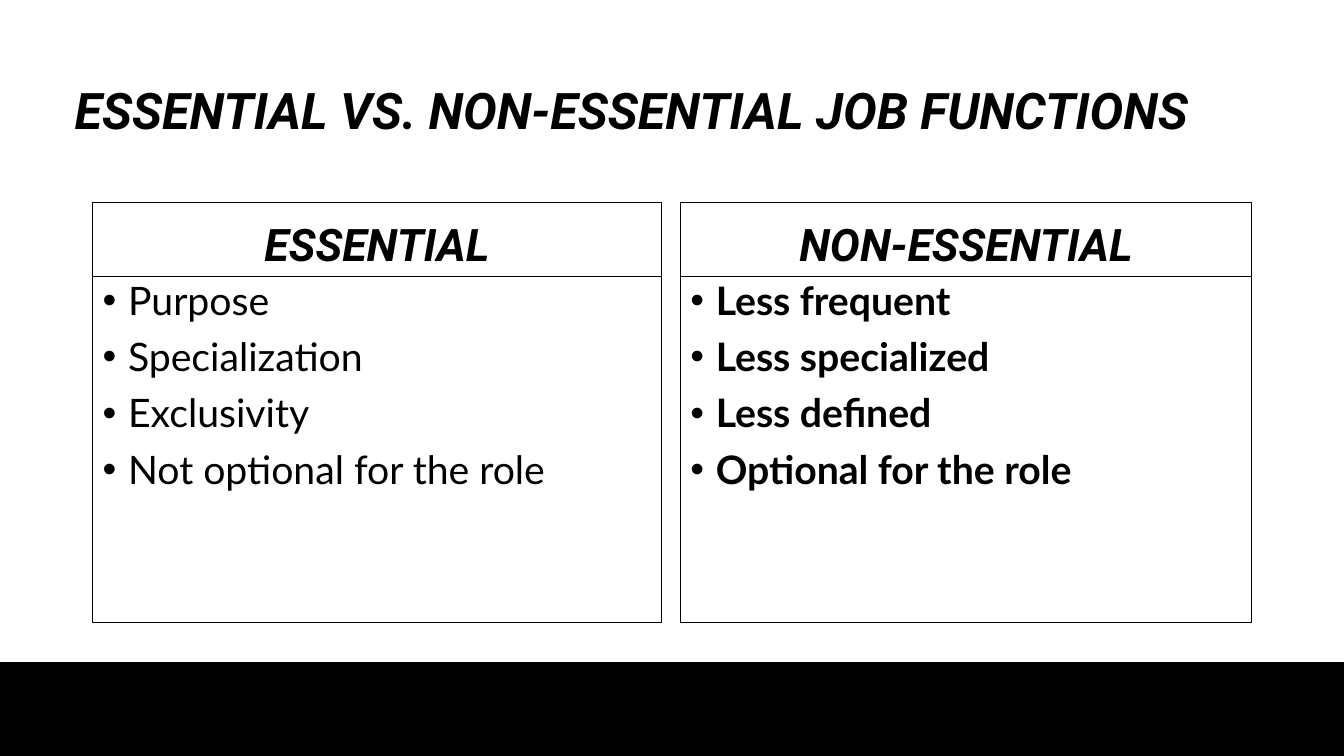
import pptx
import pptx.dml.color
import pptx.enum.shapes
import pptx.enum.text
import pptx.oxml.ns
import pptx.util
from lxml import etree

Cm = pptx.util.Cm
Pt = pptx.util.Pt
ALIGN = pptx.enum.text.PP_ALIGN
ANCHOR = pptx.enum.text.MSO_ANCHOR


def color(hex_code):
    return pptx.dml.color.RGBColor.from_string(hex_code)


class SlideBuilder:
    """Hold the slide and its style, and draw each kind of element."""

    ink = "000000"
    heading_font = "Roboto"
    body_font = "Lato"

    def __init__(self, slide):
        self.slide = slide

    def box(self, left, top, width, height, line_width, fill=None):
        box = self.slide.shapes.add_shape(
            pptx.enum.shapes.MSO_SHAPE.RECTANGLE,
            Cm(left), Cm(top), Cm(width), Cm(height))
        box.shadow.inherit = False
        if fill:
            box.fill.solid()
            box.fill.fore_color.rgb = color(fill)
        else:
            box.fill.background()
        box.line.color.rgb = color(self.ink)
        box.line.width = Pt(line_width)
        return box.text_frame

    def styled_run(self, paragraph, text, font, size, bold=False, italic=False):
        paragraph.line_spacing = 0.9
        run = paragraph.add_run()
        run.text = text
        run.font.name = font
        run.font.size = Pt(size)
        run.font.bold = bold
        run.font.italic = italic
        run.font.color.rgb = color(self.ink)

    def heading(self, frame, text, size, align, anchor):
        frame.word_wrap = True
        frame.vertical_anchor = anchor
        paragraph = frame.paragraphs[0]
        paragraph.alignment = align
        self.styled_run(paragraph, text, self.heading_font, size, True, True)

    def title(self, text, left, top, width, height):
        frame = self.slide.shapes.add_textbox(
            Cm(left), Cm(top), Cm(width), Cm(height)).text_frame
        self.heading(frame, text, 36, ALIGN.LEFT, ANCHOR.MIDDLE)

    def bullet(self, paragraph):
        properties = paragraph._p.get_or_add_pPr()
        properties.set("marL", str(Cm(0.64)))
        properties.set("indent", str(-Cm(0.64)))
        qn = pptx.oxml.ns.qn
        etree.SubElement(properties, qn("a:buFont"), typeface="Arial")
        etree.SubElement(properties, qn("a:buChar"), char="•")

    def bullets(self, frame, items, bold):
        frame.word_wrap = True
        frame.vertical_anchor = ANCHOR.TOP
        for index, item in enumerate(items):
            paragraph = frame.add_paragraph() if index else frame.paragraphs[0]
            self.bullet(paragraph)
            paragraph.alignment = ALIGN.LEFT
            if index:
                paragraph.space_before = Pt(10)
            self.styled_run(paragraph, item, self.body_font, 28, bold)

    def column(self, left, width, name, traits, bold):
        top, header_height, body_height = 5.11, 1.85, 8.74
        header = self.box(left, top, width, header_height, 0.75)
        self.heading(header, name, 32, ALIGN.CENTER, ANCHOR.BOTTOM)
        body = self.box(left, top + header_height, width, body_height, 0.75)
        self.bullets(body, traits, bold)


def main():
    deck = pptx.Presentation()
    deck.slide_width = Cm(33.87)
    deck.slide_height = Cm(19.05)
    builder = SlideBuilder(deck.slides.add_slide(deck.slide_layouts[6]))

    builder.box(0, 16.71, 33.87, 2.34, 1, fill=builder.ink)
    builder.title("ESSENTIAL VS. NON-ESSENTIAL JOB FUNCTIONS", 1.63, 1.02, 31.12, 3.68)
    builder.column(
        2.34, 14.33, "ESSENTIAL",
        ["Purpose", "Specialization", "Exclusivity", "Not optional for the role"],
        bold=False)
    builder.column(
        17.15, 14.4, "NON-ESSENTIAL",
        ["Less frequent", "Less specialized", "Less defined", "Optional for the role"],
        bold=True)

    deck.save("out.pptx")


if __name__ == "__main__":
    main()
